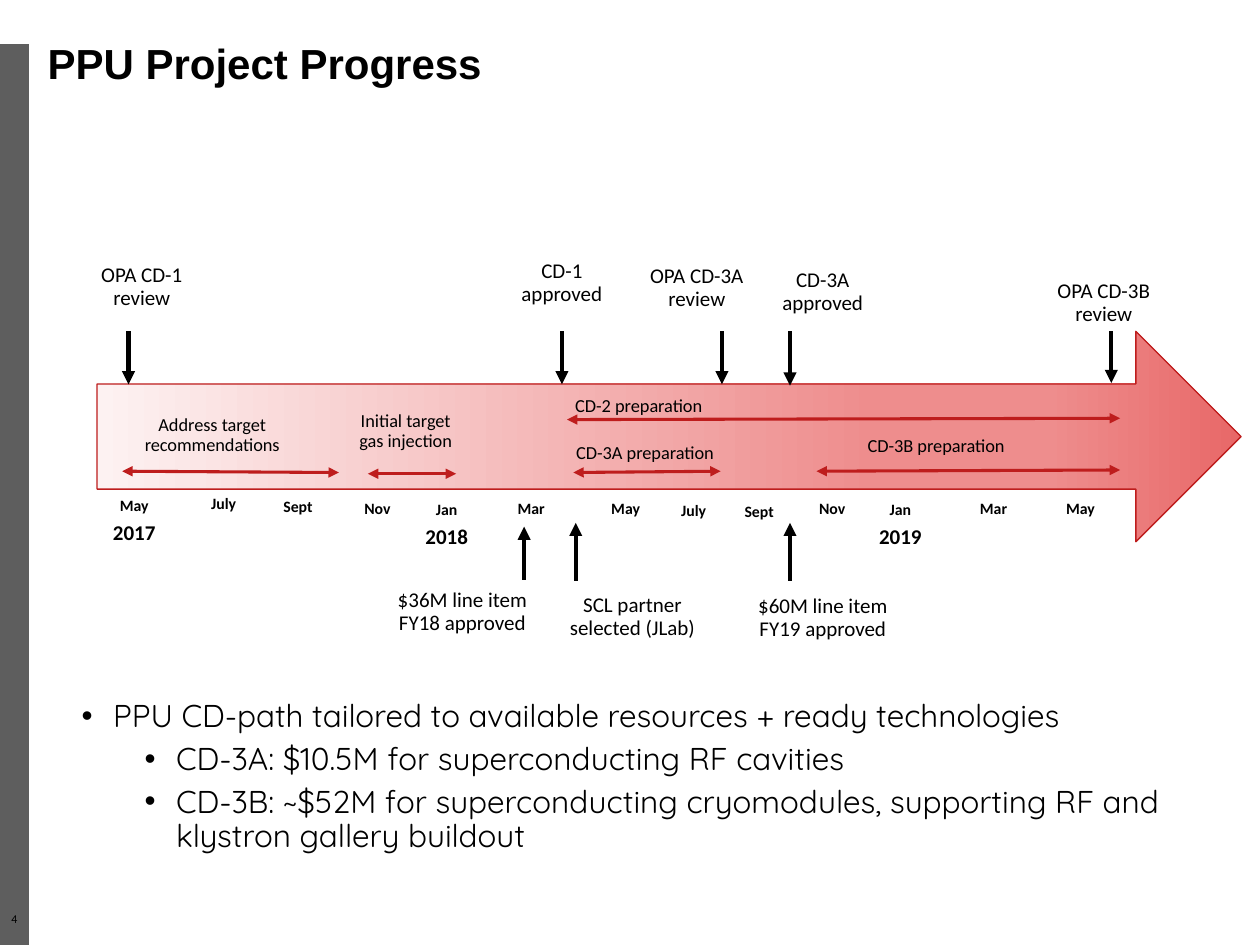
import pptx
import pptx.util
import pptx.dml.color
import pptx.enum.shapes
import pptx.enum.text
import pptx.oxml.ns
import copy
import dataclasses
from lxml import etree

Pt = pptx.util.Pt
RGB = pptx.dml.color.RGBColor.from_string
SHAPE = pptx.enum.shapes.MSO_SHAPE
ALIGN = pptx.enum.text.PP_ALIGN
qn = pptx.oxml.ns.qn


@dataclasses.dataclass(frozen=True)
class Theme:
    ink: str = "000000"
    rail: str = "5E5E5E"
    red: str = "BE1D1D"
    band: tuple = ((0, "FDF2F2"), (0.68, "EE8D8D"), (0.83, "EE8D8D"), (1, "E86868"))
    label_font: str = "Calibri"
    title_font: str = "Arial"
    body_font: str = "Quicksand"
    title: float = 24
    body: float = 18
    event: float = 12
    task: float = 10.5
    month: float = 9
    number: float = 6.8


theme = Theme()
prs = pptx.Presentation()
prs.slide_width = pptx.util.Inches(10)
prs.slide_height = pptx.util.Inches(7.5)
s = prs.slides.add_slide(prs.slide_layouts[6])

# Grid of 100 columns by 75 rows
COL = prs.slide_width / 100
ROW = prs.slide_height / 75


def add_text(box, lines, font=theme.label_font, align=ALIGN.CENTER, grow=True):
    """Box is (column, row, columns, rows); each line is (text, size, bold, space before)."""
    left, top, width, height = box
    sp = s.shapes.add_textbox(*map(round, (left * COL, top * ROW, width * COL, height * ROW)))
    tf = sp.text_frame
    tf.word_wrap = True
    if grow:
        tf.auto_size = pptx.enum.text.MSO_AUTO_SIZE.SHAPE_TO_FIT_TEXT
    for i, (text, size, bold, before) in enumerate(lines):
        p = tf.add_paragraph() if i else tf.paragraphs[0]
        p.alignment = align
        p.line_spacing = 0.9
        if before:
            p.space_before = Pt(before)
        r = p.add_run()
        r.text = text
        r.font.name = font
        r.font.size = Pt(size)
        r.font.bold = bold
        r.font.color.rgb = RGB(theme.ink)
    return tf


def add_arrow(x1, y1, x2, y2, color, width, ends):
    line = s.shapes.add_connector(
        pptx.enum.shapes.MSO_CONNECTOR.STRAIGHT,
        *map(round, (x1 * COL, y1 * ROW, x2 * COL, y2 * ROW)))
    line.line.color.rgb = RGB(color)
    line.line.width = Pt(width)
    for end in ends:
        etree.SubElement(line.line._get_or_add_ln(), qn(f"a:{end}"), type="triangle")
    etree.SubElement(line._element.spPr, qn("a:effectLst"))


# Side rail, slide number and title
sp = s.shapes.add_shape(SHAPE.RECTANGLE, 0, round(3.5 * ROW), round(2.3 * COL), round(71.5 * ROW))
sp.shadow.inherit = False
sp.fill.solid()
sp.fill.fore_color.rgb = RGB(theme.rail)
sp.line.fill.background()

tf = add_text((0, 72.5, 2.3, 1.7), [("4", theme.number, False, 0)], grow=False)
tf.margin_left = tf.margin_right = tf.margin_top = tf.margin_bottom = 0

tf = add_text((2.8, 3, 93.7, 4.4), [("PPU Project Progress", theme.title, True, 0)],
              theme.title_font, ALIGN.LEFT, grow=False)
tf.vertical_anchor = pptx.enum.text.MSO_ANCHOR.MIDDLE

# Bulleted summary
summary = [
    (0, "PPU CD-path tailored to available resources + ready technologies"),
    (1, "CD-3A: $10.5M for superconducting RF cavities"),
    (1, "CD-3B: ~$52M for superconducting cryomodules, supporting RF and "
        "klystron gallery buildout"),
]
tf = add_text((5.5, 55.1, 90.4, 5.4), [(text, theme.body, False, 5 * level) for level, text in summary],
              theme.body_font, ALIGN.LEFT, grow=False)
for p, (level, _) in zip(tf.paragraphs, summary):
    p.level = level
    pPr = p._p.get_or_add_pPr()
    pPr.set("marL", str(round((2.5 + 5 * level) * COL)))
    pPr.set("indent", str(round(-2.5 * COL)))
    etree.SubElement(pPr, qn("a:buFont"), typeface="Arial")
    etree.SubElement(pPr, qn("a:buChar"), char="•")

# Timeline band
sp = s.shapes.add_shape(SHAPE.RIGHT_ARROW, *map(round, (7.7 * COL, 26.3 * ROW, 90.8 * COL, 16.7 * ROW)))
sp.shadow.inherit = False
sp.line.color.rgb = RGB(theme.red)
sp.line.width = Pt(0.75)
sp.fill.gradient()
sp.fill.gradient_angle = 0
stops = sp._element.spPr.find(".//" + qn("a:gsLst"))
for _ in range(len(theme.band) - len(stops)):
    stops.append(copy.deepcopy(stops[0]))
for stop, (position, color) in zip(sp.fill.gradient_stops, theme.band):
    stop.position = position
    stop.color.rgb = RGB(color)

# Events: text, label column, row and width, then arrow column, start row and end row
events = [
    ("OPA CD-1 review", 6.2, 20.5, 10.1, 10.2, 26.3, 30.5),
    ("CD-1 approved", 40.1, 20.2, 9, 44.6, 26.3, 30.5),
    ("OPA CD-3A review", 49.7, 20.6, 11.2, 57.3, 26.3, 30.5),
    ("CD-3A approved", 60.8, 20.9, 9, 62.7, 26.3, 30.6),
    ("OPA CD-3B review", 82.2, 21.8, 10.8, 88.2, 26.3, 30.4),
    ("$36M line item FY18 approved", 29.9, 46.3, 13.6, 41.6, 46, 41.8),
    ("SCL partner selected (JLab)", 43.4, 46.7, 13.6, 45.7, 46.1, 41.5),
    ("$60M line item FY19 approved", 58.2, 46.8, 14.2, 62.7, 46.1, 41.5),
]
for text, left, top, width, x, start, end in events:
    add_text((left, top, width, 4.6), [(text, theme.event, False, 0)])
    add_arrow(x, start, x, end, theme.ink, 2.5, ["tailEnd"])

# Tasks: text, label box, then span from and to
tasks = [
    ("Address target recommendations", (8, 32.5, 17.7, 4.2), (9.7, 37.4, 26.9, 37.5)),
    ("Initial target gas injection", (26.7, 32.2, 11, 4.2), (29.2, 37.6, 36.2, 37.6)),
    ("CD-2 preparation", (43.4, 31, 14.6, 2.6), (45, 33.3, 88.9, 33.2)),
    ("CD-3A preparation", (43.9, 34.7, 14.6, 2.6), (45.5, 37.5, 57.2, 37.4)),
    ("CD-3B preparation", (64.2, 34.2, 20.2, 2.6), (64.8, 37.4, 88.9, 37.3)),
]
for text, box, span in tasks:
    add_arrow(*span, theme.red, 1.75, ["headEnd", "tailEnd"])
    add_text(box, [(text, theme.task, False, 0)])

# Months: name, column, row, width and the year where one starts
months = [
    ("May", 7.7, 39, 5.9, "2017"), ("July", 14.8, 38.9, 5.9, ""),
    ("Sept", 19.7, 39.1, 7.9, ""), ("Nov", 26, 39.3, 7.9, ""),
    ("Jan", 31.5, 39.3, 7.9, "2018"), ("Mar", 38.2, 39.3, 7.9, ""),
    ("May", 45.7, 39.3, 7.9, ""), ("July", 51.1, 39.4, 7.9, ""),
    ("Sept", 56.3, 39.5, 7.9, ""), ("Nov", 62.1, 39.3, 7.9, ""),
    ("Jan", 67.5, 39.3, 7.9, "2019"), ("Mar", 74.9, 39.3, 7.9, ""),
    ("May", 81.8, 39.3, 7.9, ""),
]
for month, left, top, width, year in months:
    lines = [(month, theme.month, True, 0)]
    if year:
        lines.append((year, theme.event, True, 4.5))
    add_text((left, top, width, 4.9 if year else 2.4), lines)

prs.save("out.pptx")
